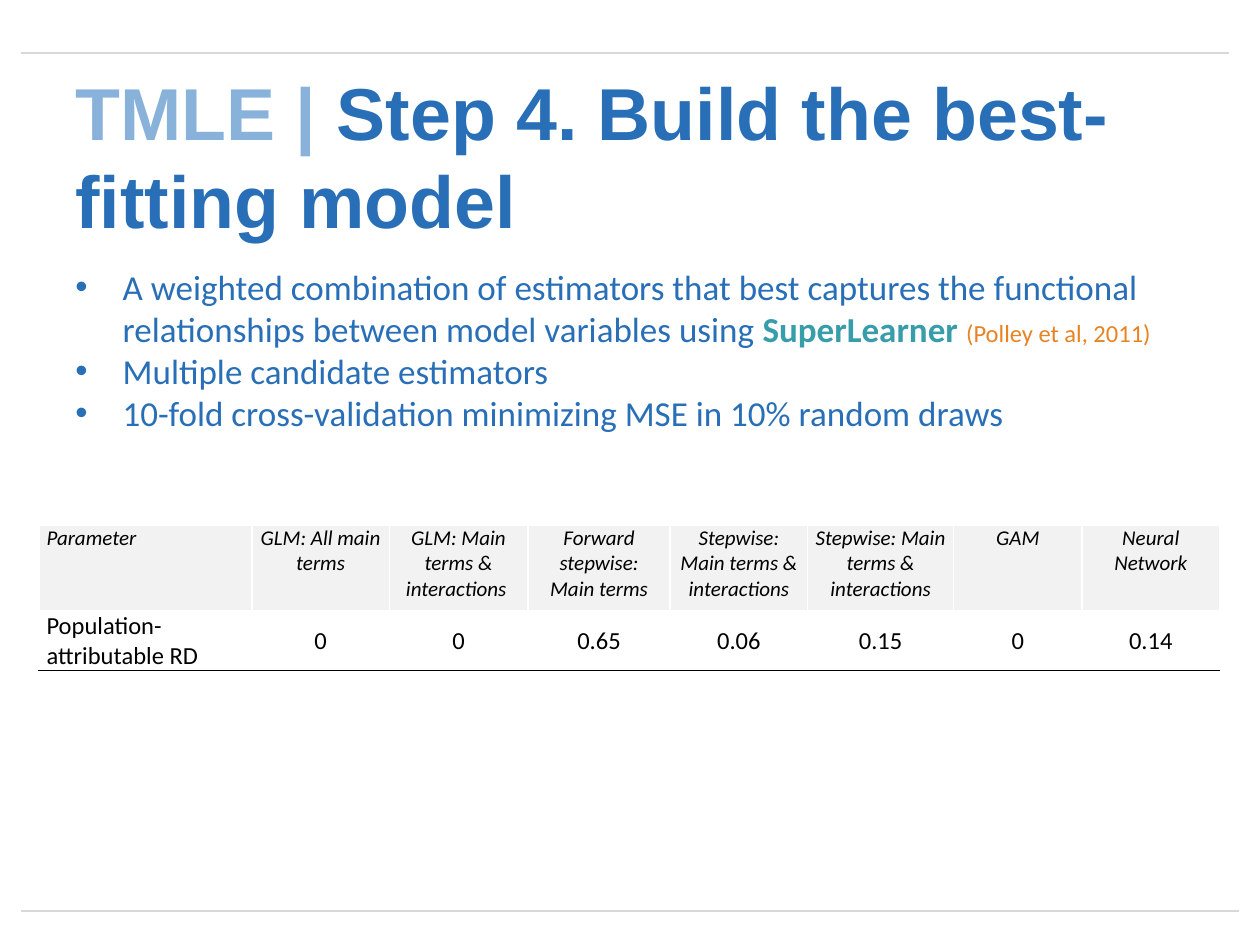
import lxml.etree
import pptx
import pptx.dml.color
import pptx.enum.shapes
import pptx.enum.text
import pptx.oxml.ns
import pptx.util

ALIGN = pptx.enum.text.PP_ALIGN
ANCHOR = pptx.enum.text.MSO_ANCHOR
BLUE, PALE, TEAL, ORANGE = "286FB7", "89B2DB", "389DAA", "E68323"
GREY, SHADE, BLACK, WHITE = "D8D8D8", "F2F2F2", "000000", "FFFFFF"


def color(value):
    return pptx.dml.color.RGBColor.from_string(value)


def sub(parent, tag, **attrs):
    return lxml.etree.SubElement(parent, pptx.oxml.ns.qn(tag), attrs)


class Deck:
    """Style and current slide, measured on a grid of 100 columns by 75 rows."""

    def __init__(self):
        self.prs = pptx.Presentation()
        self.prs.slide_width = pptx.util.Inches(10)
        self.prs.slide_height = pptx.util.Inches(7.5)
        self.unit = self.prs.slide_width / 100
        self.s = self.prs.slides.add_slide(self.prs.slide_layouts[6])

    def grid(self, *cells):
        return [pptx.util.Emu(round(c * self.unit)) for c in cells]

    def run(self, p, text, size, fill, font="Calibri", bold=False, italic=False):
        r = p.add_run()
        r.text = text
        r.font.name, r.font.size = font, pptx.util.Pt(size)
        r.font.bold, r.font.italic = bold, italic
        r.font.color.rgb = color(fill)

    def rule(self, left, right, row):
        straight = pptx.enum.shapes.MSO_CONNECTOR.STRAIGHT
        line = self.s.shapes.add_connector(straight, *self.grid(left, row, right, row))
        line.line.color.rgb = color(GREY)
        line.line.width = pptx.util.Pt(1.5)
        sub(line._element.spPr, "a:effectLst")

    def text(self, box, paragraphs, anchor=ANCHOR.TOP, bullet=None):
        tf = self.s.shapes.add_textbox(*self.grid(*box)).text_frame
        tf.word_wrap = True
        tf.vertical_anchor = anchor
        for i, runs in enumerate(paragraphs):
            p = tf.add_paragraph() if i else tf.paragraphs[0]
            if bullet:
                pPr = p._p.get_or_add_pPr()
                indent = self.grid(3.75)[0]
                pPr.set("marL", str(indent))
                pPr.set("indent", str(-indent))
                sub(pPr, "a:buFont", typeface="Arial")
                sub(pPr, "a:buChar", char=bullet)
            for r in runs:
                self.run(p, **r)

    def border(self, cell, side, fill):
        ln = sub(cell._tc.get_or_add_tcPr(), f"a:ln{side}", w=str(pptx.util.Pt(1)))
        sub(sub(ln, "a:solidFill"), "a:srgbClr", val=fill)

    def cell(self, cell, text, header, first):
        cell.margin_left = cell.margin_right = self.grid(0.6)[0]
        cell.margin_top = cell.margin_bottom = 0
        cell.vertical_anchor = ANCHOR.TOP if header else ANCHOR.MIDDLE
        self.border(cell, "T", WHITE)
        self.border(cell, "B", WHITE if header else BLACK)
        cell.fill.solid()
        cell.fill.fore_color.rgb = color(SHADE if header else WHITE)
        p = cell.text_frame.paragraphs[0]
        p.alignment = ALIGN.LEFT if first else ALIGN.CENTER
        self.run(p, text, 12 if header else 14, BLACK, italic=header)

    def table(self, left, top, widths, heights, rows):
        box = self.grid(left, top, sum(widths), sum(heights))
        tbl = self.s.shapes.add_table(len(rows), len(widths), *box).table
        tbl.first_row = tbl.horz_banding = False
        for column, width in zip(tbl.columns, self.grid(*widths)):
            column.width = width
        for row, height in zip(tbl.rows, self.grid(*heights)):
            row.height = height
        for i, values in enumerate(rows):
            for j, value in enumerate(values):
                self.cell(tbl.cell(i, j), value, i == 0, j == 0)


def main():
    deck = Deck()
    deck.rule(1.7, 97.5, 4.2)
    deck.rule(1.7, 98.3, 72.3)

    title = dict(size=42, font="Arial", bold=True)
    deck.text((5, 7.3, 90, 10), [[
        dict(text="TMLE |", fill=PALE, **title),
        dict(text=" Step 4. Build the best- fitting model", fill=BLUE, **title),
    ]], anchor=ANCHOR.MIDDLE)

    body = dict(size=20, fill=BLUE)
    deck.text((5, 20.6, 92.5, 14.5), [
        [dict(text="A weighted combination of estimators that best captures the functional "
                   "relationships between model variables using ", **body),
         dict(text="SuperLearner ", size=20, fill=TEAL, bold=True),
         dict(text="(Polley et al, 2011)", size=14, fill=ORANGE)],
        [dict(text="Multiple candidate estimators", **body)],
        [dict(text="10-fold cross-validation minimizing MSE in 10% random draws", **body)],
    ], bullet="•")

    weights = [
        ("Parameter", "Population-attributable RD"),
        ("GLM: All main terms", "0"),
        ("GLM: Main terms & interactions ", "0"),
        ("Forward stepwise: Main terms", "0.65"),
        ("Stepwise: Main terms & interactions", "0.06"),
        ("Stepwise: Main terms & interactions", "0.15"),
        ("GAM", "0"),
        ("Neural Network", "0.14"),
    ]
    widths = [16.9, 10.9, 11, 11.3, 10.9, 11.6, 10.2, 10.9]
    deck.table(3.1, 41.7, widths, [6.8, 4.7], list(zip(*weights)))
    deck.prs.save("out.pptx")


if __name__ == "__main__":
    main()
